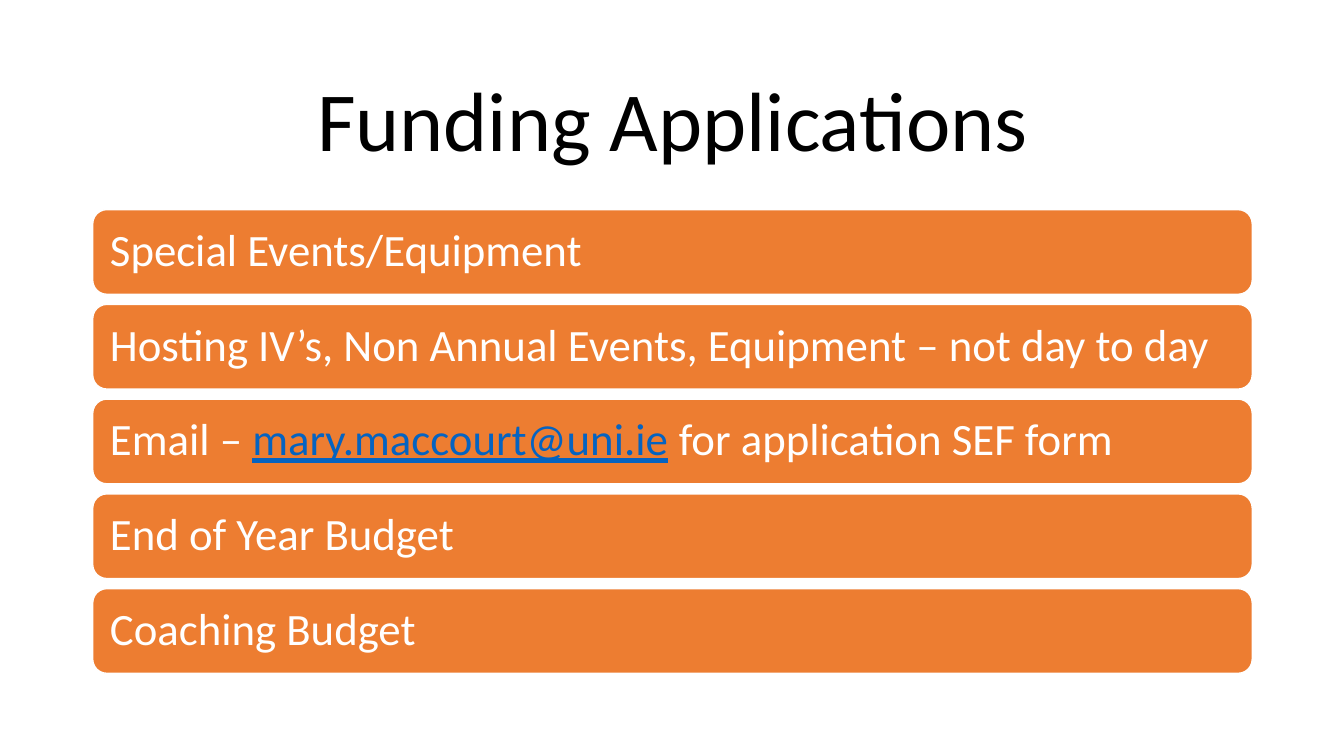
import dataclasses

import pptx
import pptx.dml.color
import pptx.enum.shapes
import pptx.enum.text
import pptx.shapes.autoshape
import pptx.slide
import pptx.text.text
import pptx.util

Inches = pptx.util.Inches
FONT = "Calibri"
BLACK = "000000"
WHITE = "FFFFFF"
ORANGE = "ED7D31"
LINK_BLUE = "0563C1"
LEFT, WIDTH = 0.92, 11.5
FIRST_TOP, BAR_HEIGHT, BAR_STEP = 2.08, 0.84, 0.94
BAR_INSET = 0.13


@dataclasses.dataclass(frozen=True)
class Span:
    text: str
    color: str = WHITE
    underline: bool = False


@dataclasses.dataclass(frozen=True)
class Bar:
    spans: tuple[Span, ...]


BARS = (
    Bar((Span("Special Events/Equipment"),)),
    Bar((Span("Hosting IV’s, Non Annual Events, Equipment – not day to day"),)),
    Bar((
        Span("Email – "),
        Span("mary.maccourt@uni.ie", LINK_BLUE, True),
        Span(" for application SEF form"),
    )),
    Bar((Span("End of Year Budget"),)),
    Bar((Span("Coaching Budget"),)),
)


def rgb(value: str) -> pptx.dml.color.RGBColor:
    return pptx.dml.color.RGBColor.from_string(value)


def write_line(
    frame: pptx.text.text.TextFrame,
    spans: tuple[Span, ...],
    size: int,
    alignment: pptx.enum.text.PP_ALIGN,
) -> None:
    frame.word_wrap = True
    frame.vertical_anchor = pptx.enum.text.MSO_ANCHOR.MIDDLE
    para = frame.paragraphs[0]
    para.alignment = alignment
    para.line_spacing = 0.9
    for span in spans:
        run = para.add_run()
        run.text = span.text
        run.font.name = FONT
        run.font.size = pptx.util.Pt(size)
        run.font.color.rgb = rgb(span.color)
        run.font.underline = span.underline


def draw_title(page: pptx.slide.Slide, text: str) -> None:
    box = page.shapes.add_textbox(Inches(LEFT), Inches(0.61), Inches(WIDTH), Inches(1.24))
    write_line(box.text_frame, (Span(text, BLACK),), 60, pptx.enum.text.PP_ALIGN.CENTER)


def draw_bar(page: pptx.slide.Slide, bar: Bar, top: float) -> None:
    shape: pptx.shapes.autoshape.Shape = page.shapes.add_shape(
        pptx.enum.shapes.MSO_SHAPE.ROUNDED_RECTANGLE,
        Inches(LEFT), Inches(top), Inches(WIDTH), Inches(BAR_HEIGHT),
    )
    shape.shadow.inherit = False
    shape.fill.solid()
    shape.fill.fore_color.rgb = rgb(ORANGE)
    shape.line.color.rgb = rgb(WHITE)
    shape.line.width = pptx.util.Pt(1)
    frame = shape.text_frame
    frame.margin_left = frame.margin_right = Inches(BAR_INSET)
    frame.margin_top = frame.margin_bottom = Inches(BAR_INSET)
    write_line(frame, bar.spans, 32, pptx.enum.text.PP_ALIGN.LEFT)


def main() -> None:
    deck = pptx.Presentation()
    deck.slide_width = Inches(13.33)
    deck.slide_height = Inches(7.5)
    page = deck.slides.add_slide(deck.slide_layouts[6])
    draw_title(page, "Funding Applications")
    for index, bar in enumerate(BARS):
        draw_bar(page, bar, FIRST_TOP + index * BAR_STEP)
    deck.save("out.pptx")


if __name__ == "__main__":
    main()
